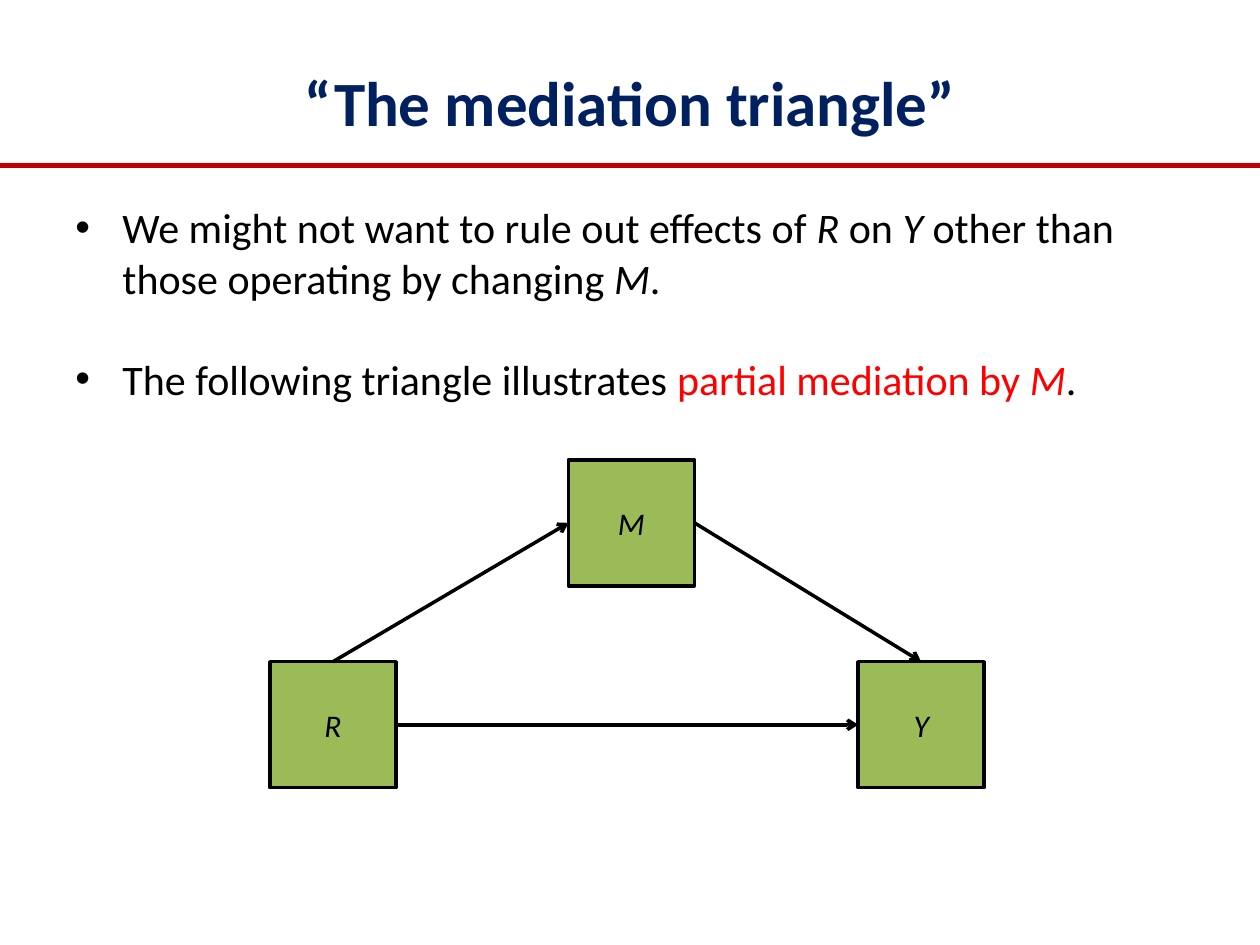
from dataclasses import dataclass

from lxml.etree import SubElement
from pptx import Presentation
from pptx.dml.color import RGBColor
from pptx.enum.shapes import MSO_CONNECTOR, MSO_SHAPE
from pptx.enum.text import MSO_ANCHOR, PP_ALIGN
from pptx.oxml.ns import qn
from pptx.shapes.autoshape import Shape
from pptx.shapes.connector import Connector
from pptx.slide import Slide
from pptx.text.text import _Paragraph
from pptx.util import Cm, Pt

COLORS = {
    "navy": "002060",
    "rule": "C00000",
    "black": "000000",
    "accent": "FF0000",
    "green": "9BBB59",
}
FONT = "Calibri"
BOX_SIZE = 2.54
TOP, LEFT, BOTTOM, RIGHT = range(4)


@dataclass(frozen=True)
class Variable:
    label: str
    left: float
    top: float


@dataclass(frozen=True)
class Effect:
    cause: str
    cause_side: int
    outcome: str
    outcome_side: int


@dataclass(frozen=True)
class Phrase:
    text: str
    italic: bool = False
    color: str = "black"


VARIABLES = [
    Variable("R", 5.44, 13.34),
    Variable("Y", 17.3, 13.34),
    Variable("M", 11.46, 9.27),
]
EFFECTS = [
    Effect("R", RIGHT, "Y", LEFT),
    Effect("M", RIGHT, "Y", TOP),
    Effect("R", TOP, "M", LEFT),
]
BULLETS = [
    [
        Phrase("We might not want to rule out effects of "),
        Phrase("R", italic=True),
        Phrase(" on "),
        Phrase("Y", italic=True),
        Phrase(" other than those operating by changing "),
        Phrase("M", italic=True),
        Phrase("."),
    ],
    [
        Phrase("The following triangle illustrates "),
        Phrase("partial mediation by ", color="accent"),
        Phrase("M", italic=True, color="accent"),
        Phrase("."),
    ],
]


def rgb(color: str) -> RGBColor:
    return RGBColor.from_string(COLORS[color])


def write(paragraph: _Paragraph, text: str, *, size: float, color: str = "black",
          bold: bool = False, italic: bool = False) -> None:
    run = paragraph.add_run()
    run.text = text
    run.font.name = FONT
    run.font.size = Pt(size)
    run.font.bold = bold
    run.font.italic = italic
    run.font.color.rgb = rgb(color)


def add_bullet(paragraph: _Paragraph, phrases: list[Phrase]) -> None:
    properties = paragraph._p.get_or_add_pPr()
    properties.set("marL", str(Cm(0.95)))
    properties.set("indent", str(Cm(-0.95)))
    SubElement(properties, qn("a:buFont"), typeface="Arial")
    SubElement(properties, qn("a:buChar"), char="•")
    for phrase in phrases:
        write(paragraph, phrase.text, size=24, color=phrase.color, italic=phrase.italic)


def add_line(slide: Slide, start: tuple[float, float], end: tuple[float, float],
             color: str, width: float) -> Connector:
    line = slide.shapes.add_connector(
        MSO_CONNECTOR.STRAIGHT, *(Cm(value) for value in (*start, *end)))
    line.line.color.rgb = rgb(color)
    line.line.width = Pt(width)
    SubElement(line._element.spPr, qn("a:effectLst"))
    return line


def add_variable(slide: Slide, variable: Variable) -> Shape:
    box = slide.shapes.add_shape(
        MSO_SHAPE.RECTANGLE, Cm(variable.left), Cm(variable.top),
        Cm(BOX_SIZE), Cm(BOX_SIZE))
    box.shadow.inherit = False
    box.fill.solid()
    box.fill.fore_color.rgb = rgb("green")
    box.line.color.rgb = rgb("black")
    box.line.width = Pt(2)
    box.text_frame.vertical_anchor = MSO_ANCHOR.MIDDLE
    label = box.text_frame.paragraphs[0]
    label.alignment = PP_ALIGN.CENTER
    write(label, variable.label, size=18, italic=True)
    return box


def add_effect(slide: Slide, effect: Effect, boxes: dict[str, Shape]) -> None:
    arrow = add_line(slide, (0, 0), (1, 1), "black", 2)
    arrow.begin_connect(boxes[effect.cause], effect.cause_side)
    arrow.end_connect(boxes[effect.outcome], effect.outcome_side)
    SubElement(arrow.line._get_or_add_ln(), qn("a:tailEnd"), type="arrow")


def main() -> None:
    presentation = Presentation()
    presentation.slide_width, presentation.slide_height = Cm(25.4), Cm(19.05)
    slide = presentation.slides.add_slide(presentation.slide_layouts[5])

    add_line(slide, (0, 3.33), (25.4, 3.33), "rule", 3)

    heading = slide.shapes.title
    heading.left, heading.top = Cm(1.27), Cm(0.76)
    heading.width, heading.height = Cm(22.86), Cm(2.57)
    heading.text_frame.vertical_anchor = MSO_ANCHOR.MIDDLE
    heading_line = heading.text_frame.paragraphs[0]
    heading_line.alignment = PP_ALIGN.CENTER
    write(heading_line, "“The mediation triangle”", size=36, color="navy", bold=True)

    body = slide.shapes.add_textbox(Cm(1.27), Cm(3.94), Cm(22.86), Cm(13.08)).text_frame
    body.word_wrap = True
    for index, phrases in enumerate(BULLETS):
        paragraph = body.add_paragraph() if index else body.paragraphs[0]
        paragraph.space_before = Pt(29 if index else 0)
        add_bullet(paragraph, phrases)

    boxes = {variable.label: add_variable(slide, variable) for variable in VARIABLES}
    for effect in EFFECTS:
        add_effect(slide, effect, boxes)

    presentation.save("out.pptx")


if __name__ == "__main__":
    main()
